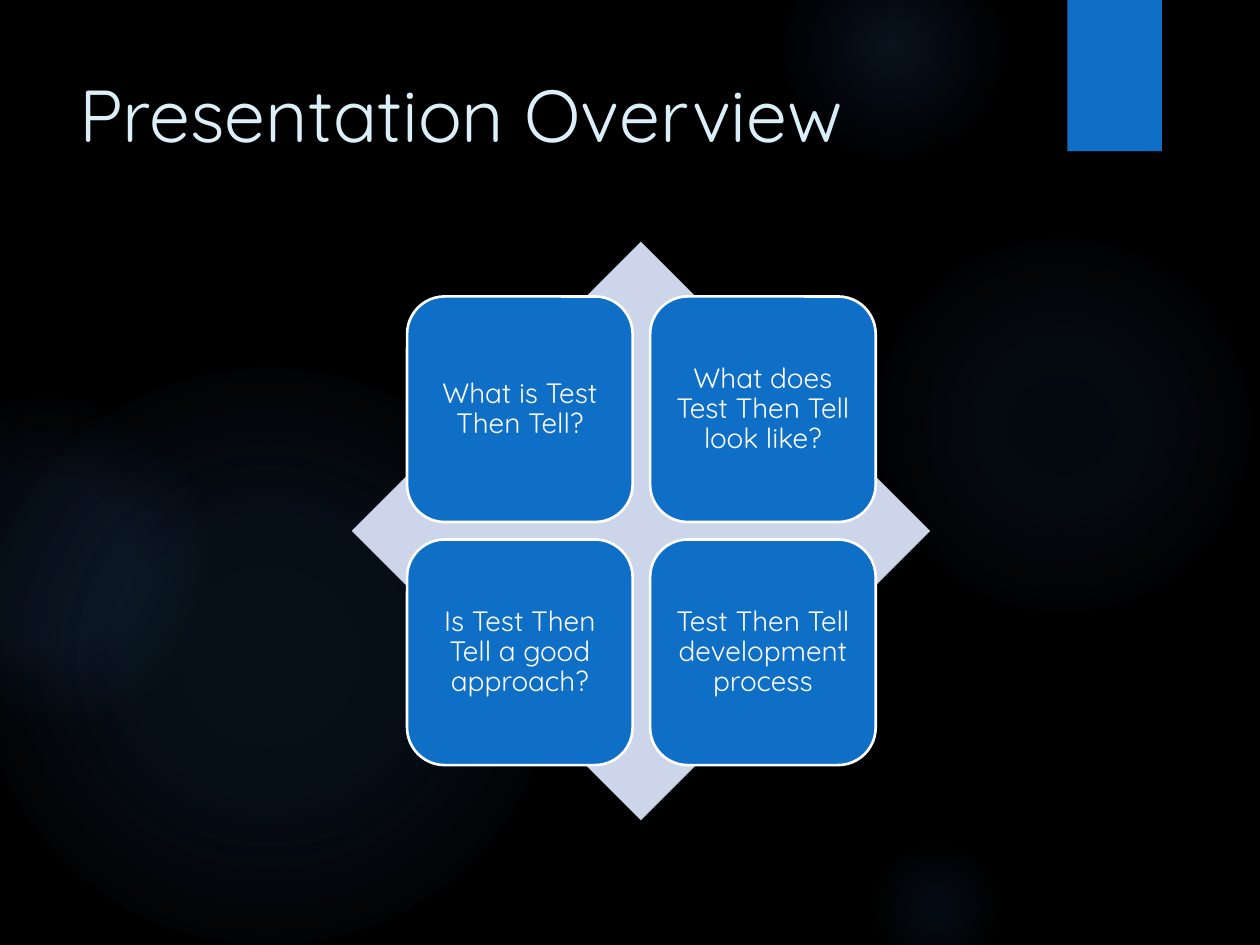
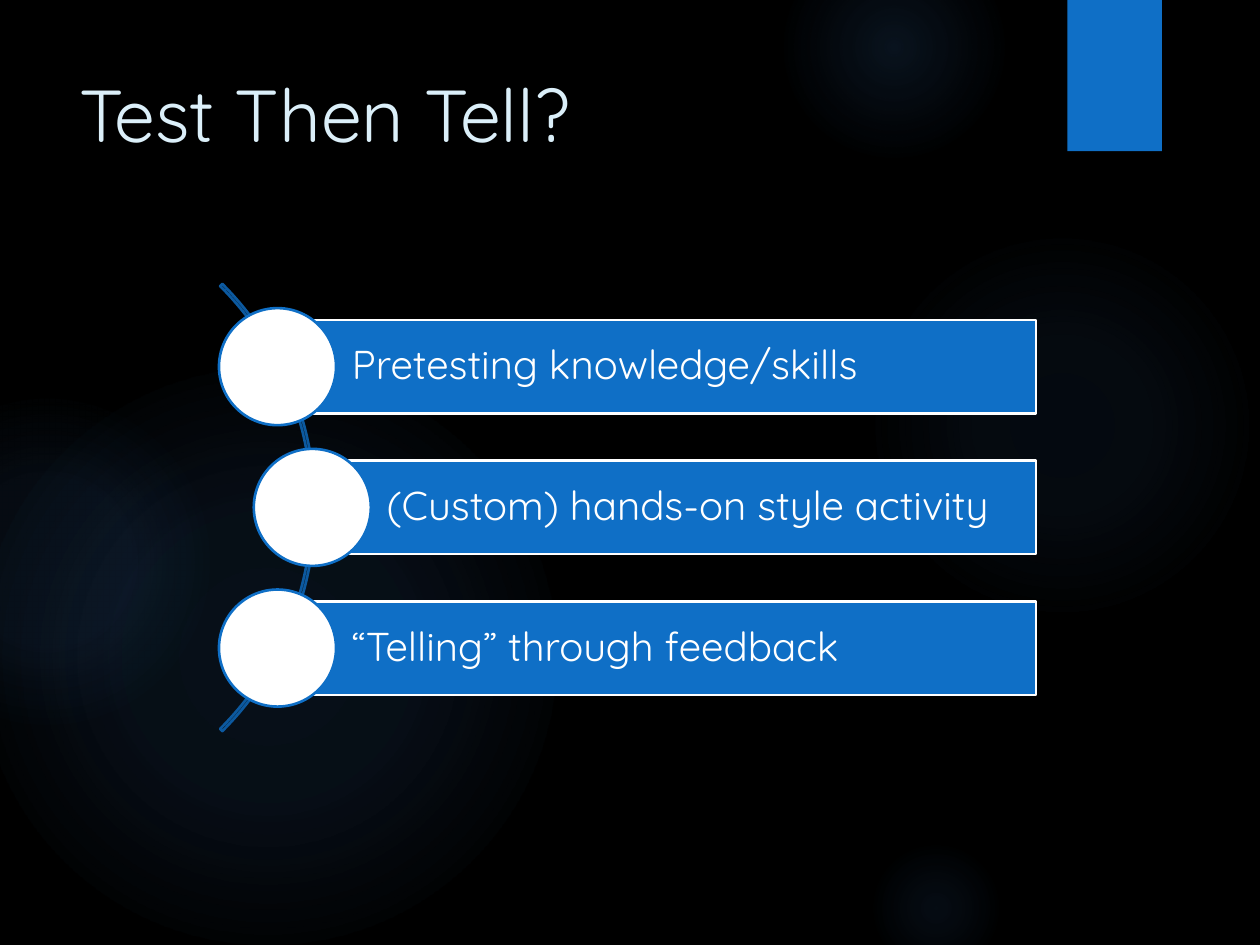
from lxml.etree import SubElement as Sub
from pptx import Presentation
from pptx.dml.color import RGBColor
from pptx.enum.shapes import MSO_SHAPE as Kind
from pptx.enum.text import MSO_ANCHOR as Anchor, PP_ALIGN as Align
from pptx.oxml.ns import qn
from pptx.util import Pt

BLUE, WHITE, GLOW = "0F6FC6", "FFFFFF", "448AD7"
PALE, ICE, NAVY, BLACK = "CCD5EA", "DBEFF9", "0C599F", "000000"
FONT = "Quicksand"

GLOWS = [
    (496, 132, 222, [(0, 7), (36, 6), (69, 0)]),
    (448, -36, 126, [(0, 14), (36, 7), (73, 0)]),
    (496, 480, 78, [(0, 9), (36, 5), (66, 0)]),
    (-12, 210, 330, [(0, 11), (36, 10), (75, 0)]),
    (-66, 228, 186, [(0, 8), (36, 8), (72, 0)]),
]
TOPICS = [
    "What is Test Then Tell?",
    "What does Test Then Tell look like?",
    "Is Test Then Tell a good approach?",
    "Test Then Tell development process",
]
STEPS = [
    (158.6, "Pretesting knowledge/skills"),
    (178.5, "(Custom) hands-on style activity"),
    (158.6, "“Telling” through feedback"),
]


def color(code):
    return RGBColor.from_string(code)


def apply(item, style):
    for name, value in style.items():
        setattr(item, name, value)


def paint(fill, code):
    if code:
        fill.solid()
        fill.fore_color.rgb = color(code)
    else:
        fill.background()


def draw(slide, kind, box, fill=None, line=None):
    shape = slide.shapes.add_shape(kind, *map(Pt, box))
    shape.shadow.inherit = False
    paint(shape.fill, fill)
    paint(shape.line.fill, line)
    if line:
        shape.line.width = Pt(1.5)
    return shape


def write(shape, text, size, code, frame, para):
    box = shape.text_frame
    box.text = text
    apply(box, {"word_wrap": True, **frame})
    first = box.paragraphs[0]
    apply(first, para)
    apply(first.font, {"name": FONT, "size": Pt(size), "bold": False})
    first.font.color.rgb = color(code)


def margins(left, rest):
    sides = {f"margin_{side}": Pt(rest) for side in ("top", "right", "bottom")}
    return {"margin_left": Pt(left), "vertical_anchor": Anchor.MIDDLE, **sides}


def add_glow(slide, left, top, size, stops):
    shape = draw(slide, Kind.OVAL, (left, top, size, size))
    props = shape.element.spPr
    grad = props.makeelement(qn("a:gradFill"), {"rotWithShape": "1"})
    props.replace(props.find(qn("a:noFill")), grad)
    group = Sub(grad, qn("a:gsLst"))
    for place, alpha in stops:
        stop = Sub(group, qn("a:gs"), pos=str(place * 1000))
        tint = Sub(stop, qn("a:srgbClr"), val=GLOW)
        Sub(tint, qn("a:alpha"), val=str(alpha * 1000))
    route = Sub(grad, qn("a:path"), {"path": "circle"})
    Sub(route, qn("a:fillToRect"), dict.fromkeys("ltrb", "50000"))


def add_slide(deck, title):
    slide = deck.slides.add_slide(deck.slide_layouts[5])
    paint(slide.background.fill, BLACK)
    for glow in GLOWS:
        add_glow(slide, *glow)
    draw(slide, Kind.RECTANGLE, (610, 0, 54, 86.4), BLUE)
    head = slide.shapes.title
    apply(head, {"left": Pt(38), "top": Pt(36), "width": Pt(556), "height": Pt(110)})
    write(head, title, 42, ICE, {"vertical_anchor": Anchor.TOP},
          {"alignment": Align.LEFT})
    return slide


def add_tiles(slide, topics):
    left, top, size, pitch = 232.6, 169.4, 128.9, 138.9
    draw(slide, Kind.DIAMOND, (201, 138.2, 330.5, 330.5), PALE)
    for spot, topic in enumerate(topics):
        row, col = divmod(spot, 2)
        box = (left + col * pitch, top + row * pitch, size, size)
        tile = draw(slide, Kind.ROUNDED_RECTANGLE, box, BLUE, WHITE)
        write(tile, topic, 16, WHITE, margins(5, 5),
              {"alignment": Align.CENTER, "line_spacing": 0.9})


def add_steps(slide, steps):
    top, pitch, right, high, dot = 182.8, 80.4, 592, 53.5, 66.9
    arc = draw(slide, Kind.BLOCK_ARC, (-181.4, 109.3, 361.4, 361.4), line=NAVY)
    for spot, value in enumerate((189, 27, 0.005)):
        arc.adjustments[spot] = value
    for row, (left, text) in enumerate(steps):
        y = top + row * pitch
        bar = draw(slide, Kind.RECTANGLE, (left, y, right - left, high), BLUE, WHITE)
        write(bar, text, 23, WHITE, margins(42.5, 4.3),
              {"alignment": Align.LEFT, "line_spacing": 0.9})
        ring = (left - dot / 2, y + (high - dot) / 2, dot, dot)
        draw(slide, Kind.OVAL, ring, WHITE, BLUE)


def main():
    deck = Presentation()
    apply(deck, {"slide_width": Pt(720), "slide_height": Pt(540)})
    add_tiles(add_slide(deck, "Presentation Overview"), TOPICS)
    add_steps(add_slide(deck, "Test Then Tell?"), STEPS)
    deck.save("out.pptx")


if __name__ == "__main__":
    main()
